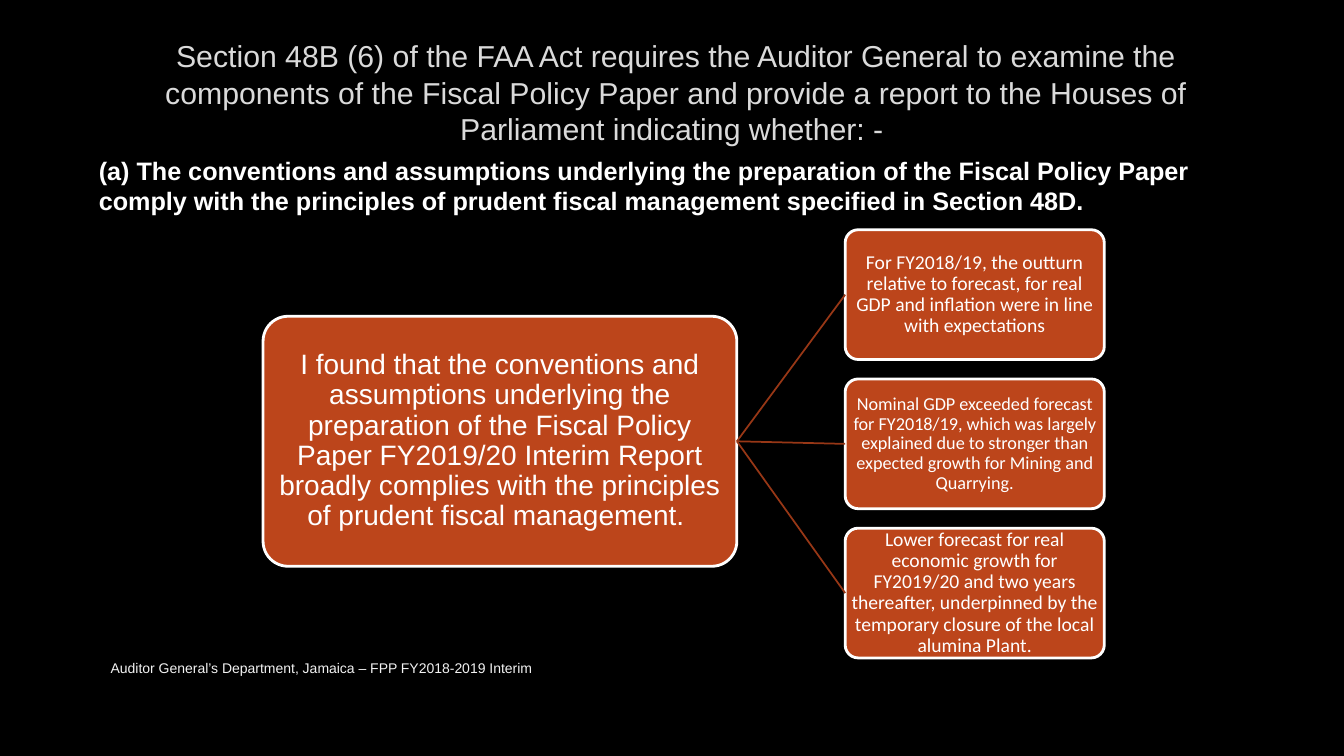
import pptx
import pptx.util
import pptx.dml.color
import pptx.enum.shapes
import pptx.enum.text
import pptx.oxml
from pptx.util import Cm, Pt

TITLE = ("Section 48B (6) of the FAA Act requires the Auditor General to examine the components of "
         "the Fiscal Policy Paper and provide a report to the Houses of Parliament indicating whether: - ")
REQUIREMENT = ("(a) The conventions and assumptions underlying the preparation of the Fiscal Policy Paper "
               "comply with the principles of prudent fiscal management specified in Section 48D.")
FINDING = ("I found that the conventions and assumptions underlying the preparation of the Fiscal Policy "
           "Paper FY2019/20 Interim Report broadly complies with the principles of prudent fiscal management. ")
REASONS = [
    ("For FY2018/19, the outturn relative to forecast, for real GDP and inflation were in line "
     "with expectations", 14),
    ("Nominal GDP exceeded forecast for FY2018/19, which was largely explained due to stronger than "
     "expected growth for Mining and Quarrying.", 13),
    ("Lower forecast for real economic growth for FY2019/20 and two years thereafter, underpinned by "
     "the temporary closure of the local alumina Plant.", 14),
]
FOOTER = "Auditor General’s Department, Jamaica – FPP FY2018-2019 Interim"

COLORS = {"back": "000000", "title": "DADADA", "text": "FFFFFF", "footer": "F2F2F2",
          "card": "BC451B", "link": "973716"}
REASON_TOP, REASON_STEP = 5.79, 3.76

ALIGN = pptx.enum.text.PP_ALIGN
ANCHOR = pptx.enum.text.MSO_ANCHOR
SHAPES = pptx.enum.shapes.MSO_SHAPE


def color(name):
    return pptx.dml.color.RGBColor.from_string(COLORS[name])


def write(shape, text, size, ink="text", font="Arial", align=ALIGN.LEFT, anchor=ANCHOR.MIDDLE):
    frame = shape.text_frame
    frame.word_wrap = True
    frame.vertical_anchor = anchor
    para = frame.paragraphs[0]
    para.text = text
    para.alignment = align
    para.font.name = font
    para.font.size = Pt(size)
    para.font.color.rgb = color(ink)
    return para


def add_label(left, top, width, height, *content, **style):
    box = page.shapes.add_textbox(Cm(left), Cm(top), Cm(width), Cm(height))
    return write(box, *content, **style)


def add_card(left, top, width, height, margin, text, size, font):
    card = page.shapes.add_shape(SHAPES.ROUNDED_RECTANGLE, Cm(left), Cm(top), Cm(width), Cm(height))
    card.adjustments[0] = 0.1
    card.shadow.inherit = False
    card.fill.solid()
    card.fill.fore_color.rgb = color("card")
    card.line.color.rgb = color("text")
    card.line.width = Pt(2)
    frame = card.text_frame
    frame.margin_left = frame.margin_right = Cm(margin)
    frame.margin_top = frame.margin_bottom = Cm(margin)
    para = write(card, text, size, font=font, align=ALIGN.CENTER)
    para.line_spacing = 0.9
    return card


def add_link(start, end):
    link = page.shapes.add_connector(pptx.enum.shapes.MSO_CONNECTOR.STRAIGHT, 0, 0, 0, 0)
    link.begin_connect(start, 3)
    link.end_connect(end, 1)
    link.line.color.rgb = color("link")
    link.line.width = Pt(1.25)
    link._element.spPr.append(pptx.oxml.parse_xml(
        '<a:effectLst xmlns:a="http://schemas.openxmlformats.org/drawingml/2006/main"/>'))


deck = pptx.Presentation()
deck.slide_width, deck.slide_height = Cm(33.87), Cm(19.05)
page = deck.slides.add_slide(deck.slide_layouts[6])
page.background.fill.solid()
page.background.fill.fore_color.rgb = color("back")

add_label(2.54, 0.86, 29, 2.92, TITLE, 21.6, ink="title", align=ALIGN.CENTER)
finding = add_card(6.63, 7.97, 11.94, 6.3, 0.2, FINDING, 20, "Arial")
for row, (reason, size) in enumerate(REASONS):
    card = add_card(21.3, REASON_TOP + row * REASON_STEP, 6.53, 3.27, 0.02, reason, size, "Calibri")
    add_link(finding, card)
add_label(2.54, 16.33, 18.54, 1.02, FOOTER, 10, ink="footer")
requirement = add_label(2.24, 3.78, 28.04, 1.8, REQUIREMENT, 18, anchor=ANCHOR.TOP)
requirement.font.bold = True

deck.save("out.pptx")
